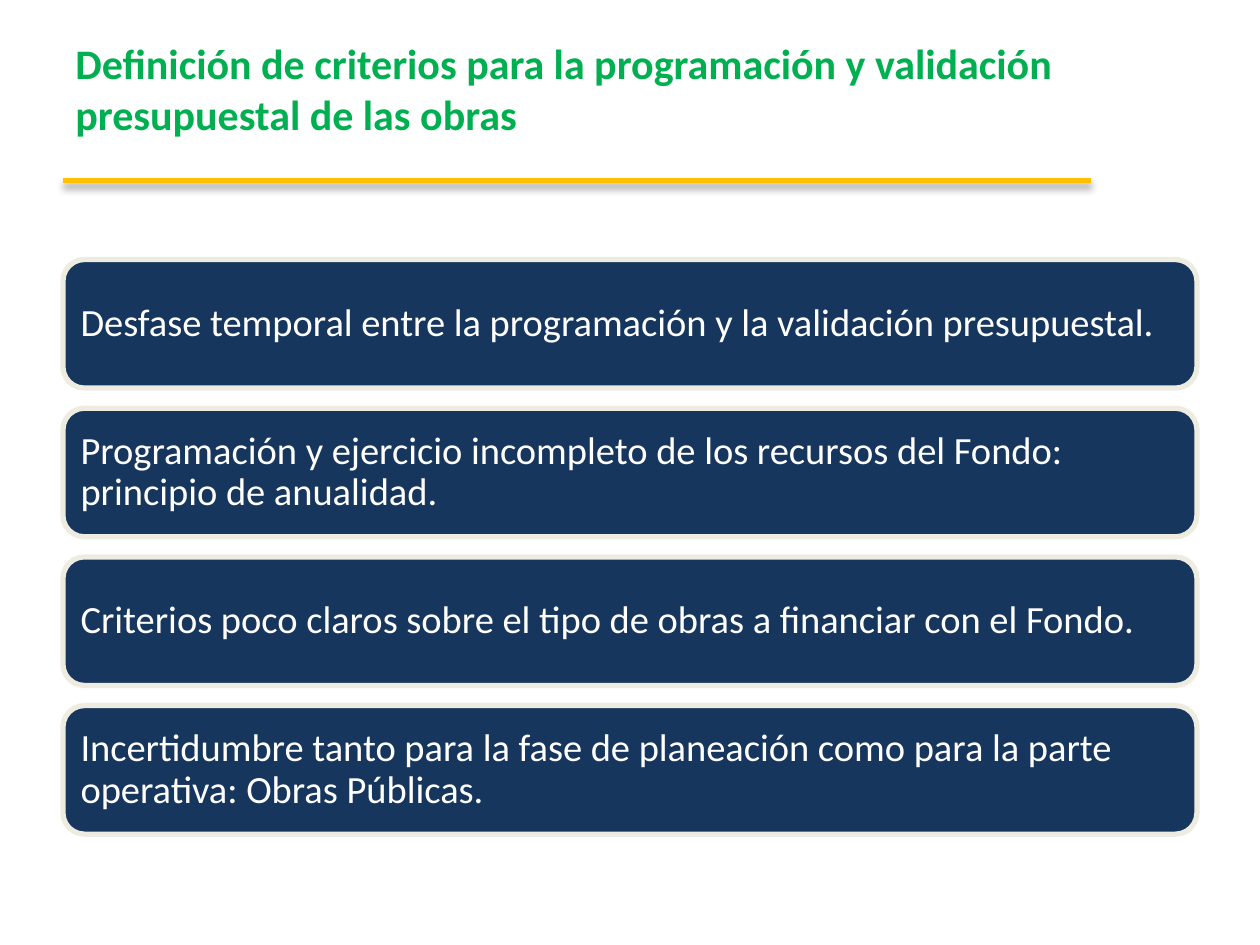
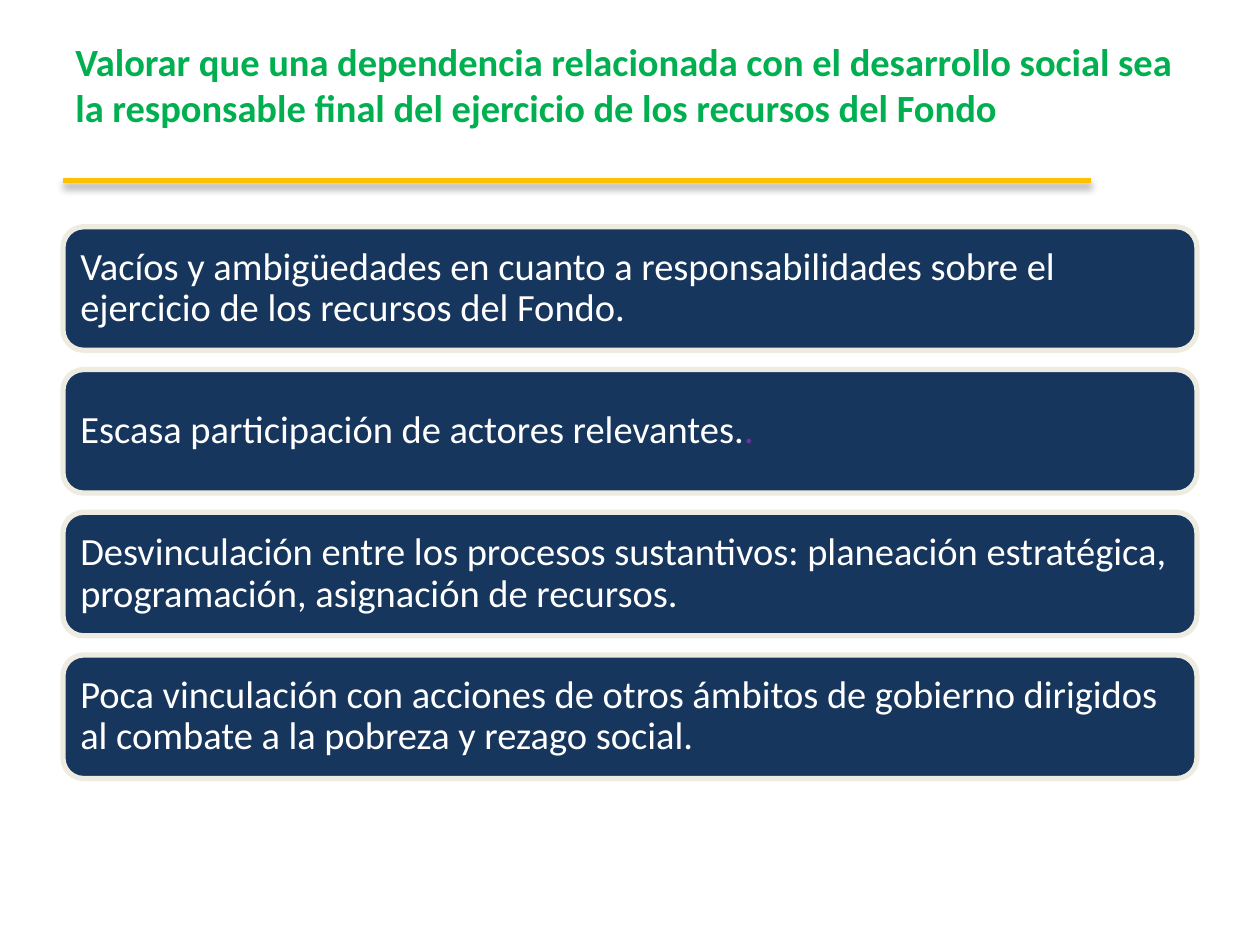
from dataclasses import dataclass
from typing import Any, NamedTuple

import lxml.etree
import pptx
import pptx.dml.color
import pptx.enum.shapes
import pptx.enum.text
import pptx.oxml.ns
import pptx.util

SLIDE_WIDTH = pptx.util.Inches(10)
SLIDE_HEIGHT = pptx.util.Inches(7.5)
COLUMNS, ROWS = 20, 75


def rgb(code: str) -> pptx.dml.color.RGBColor:
    return pptx.dml.color.RGBColor.from_string(code)


@dataclass(frozen=True)
class Theme:
    font: str = "Calibri"
    heading: str = "00B050"
    rule: str = "FFC000"
    bar: str = "17365D"
    bar_edge: str = "EEECE1"
    bar_text: str = "FFFFFF"
    accent: str = "7030A0"
    bar_size: int = 22
    stroke: int = 3


THEME = Theme()


class Span(NamedTuple):
    text: str
    color: str = THEME.bar_text


class Cell(NamedTuple):
    """A box on the slide grid, in columns and rows."""
    column: float
    row: float
    columns: float
    rows: float

    def place(self) -> tuple[int, int, int, int]:
        column, row = SLIDE_WIDTH / COLUMNS, SLIDE_HEIGHT / ROWS
        return (round(self.column * column), round(self.row * row),
                round(self.columns * column), round(self.rows * row))


class Page(NamedTuple):
    heading: str
    heading_size: int
    first_row: float
    bar_rows: float
    gap_rows: float
    findings: list[list[Span]]


HEADING_CELL = Cell(1, 3, 18, 12.5)
RULE_CELL = Cell(1, 14.3, 16.32, 0)

HEADING_FRAME = {
    "word_wrap": True,
    "vertical_anchor": pptx.enum.text.MSO_ANCHOR.TOP,
    "margin_top": 0,
}
BAR_FRAME = {
    "word_wrap": True,
    "vertical_anchor": pptx.enum.text.MSO_ANCHOR.MIDDLE,
    **{f"margin_{side}": pptx.util.Inches(0.09)
       for side in ("left", "top", "right", "bottom")},
}
BAR_PARAGRAPH = {"alignment": pptx.enum.text.PP_ALIGN.LEFT, "line_spacing": 0.9}

PAGES = [
    Page(
        "Definición de criterios para la programación y validación "
        "presupuestal de las obras",
        24, 20.6, 10.2, 1.6,
        [
            [Span("Desfase temporal entre la programación y la validación presupuestal.")],
            [Span("Programación y ejercicio incompleto de los recursos del Fondo: "
                  "principio de anualidad.")],
            [Span("Criterios poco claros sobre el tipo de obras a financiar con el Fondo.")],
            [Span("Incertidumbre tanto para la fase de planeación como para la parte "
                  "operativa: Obras Públicas.")],
        ],
    ),
    Page(
        "Valorar que una dependencia relacionada con el desarrollo social sea "
        "la responsable final del ejercicio de los recursos del Fondo",
        22, 18, 9.8, 1.53,
        [
            [Span("Vacíos y ambigüedades en cuanto a responsabilidades sobre el "
                  "ejercicio de los recursos del Fondo.")],
            [Span("Escasa participación de actores relevantes."), Span(".", THEME.accent)],
            [Span("Desvinculación entre los procesos sustantivos: planeación estratégica, "
                  "programación, asignación de recursos.")],
            [Span("Poca vinculación con acciones de otros ámbitos de gobierno dirigidos "
                  "al combate a la pobreza y rezago social.")],
        ],
    ),
]


def apply_format(target: Any, values: dict[str, Any]) -> None:
    for attribute, value in values.items():
        setattr(target, attribute, value)


def add_span(paragraph: Any, span: Span, size: int, bold: bool = False) -> None:
    run = paragraph.add_run()
    run.text = span.text
    apply_format(run.font, {"name": THEME.font, "size": pptx.util.Pt(size), "bold": bold})
    run.font.color.rgb = rgb(span.color)


def draw_heading(slide: Any, page: Page) -> None:
    frame = slide.shapes.add_textbox(*HEADING_CELL.place()).text_frame
    apply_format(frame, HEADING_FRAME)
    add_span(frame.paragraphs[0], Span(page.heading, THEME.heading), page.heading_size, bold=True)


def add_soft_shadow(connector: Any) -> None:
    """Give the connector a blurred black shadow straight below it."""
    qn = pptx.oxml.ns.qn
    effects = lxml.etree.SubElement(connector._element.spPr, qn("a:effectLst"))
    shadow = lxml.etree.SubElement(
        effects, qn("a:outerShdw"), blurRad=str(pptx.util.Pt(4)),
        dist=str(pptx.util.Pt(3)), dir="5400000", algn="ctr", rotWithShape="0")
    color = lxml.etree.SubElement(shadow, qn("a:srgbClr"), val="000000")
    lxml.etree.SubElement(color, qn("a:alpha"), val="43000")


def draw_rule(slide: Any) -> None:
    left, top, width, height = RULE_CELL.place()
    rule = slide.shapes.add_connector(
        pptx.enum.shapes.MSO_CONNECTOR.STRAIGHT, left, top, left + width, top + height)
    rule.line.color.rgb = rgb(THEME.rule)
    rule.line.width = pptx.util.Pt(THEME.stroke)
    add_soft_shadow(rule)


def draw_finding(slide: Any, cell: Cell, spans: list[Span]) -> None:
    bar = slide.shapes.add_shape(
        pptx.enum.shapes.MSO_SHAPE.ROUNDED_RECTANGLE, *cell.place())
    bar.shadow.inherit = False
    bar.fill.solid()
    bar.fill.fore_color.rgb = rgb(THEME.bar)
    bar.line.color.rgb = rgb(THEME.bar_edge)
    bar.line.width = pptx.util.Pt(THEME.stroke)
    apply_format(bar.text_frame, BAR_FRAME)
    paragraph = bar.text_frame.paragraphs[0]
    apply_format(paragraph, BAR_PARAGRAPH)
    for span in spans:
        add_span(paragraph, span, THEME.bar_size)


def draw_page(presentation: Any, page: Page) -> None:
    slide = presentation.slides.add_slide(presentation.slide_layouts[6])
    draw_heading(slide, page)
    draw_rule(slide)
    for index, spans in enumerate(page.findings):
        row = page.first_row + index * (page.bar_rows + page.gap_rows)
        draw_finding(slide, Cell(1, row, 18, page.bar_rows), spans)


def main() -> None:
    presentation = pptx.Presentation()
    apply_format(presentation, {"slide_width": SLIDE_WIDTH, "slide_height": SLIDE_HEIGHT})
    for page in PAGES:
        draw_page(presentation, page)
    presentation.save("out.pptx")


if __name__ == "__main__":
    main()
